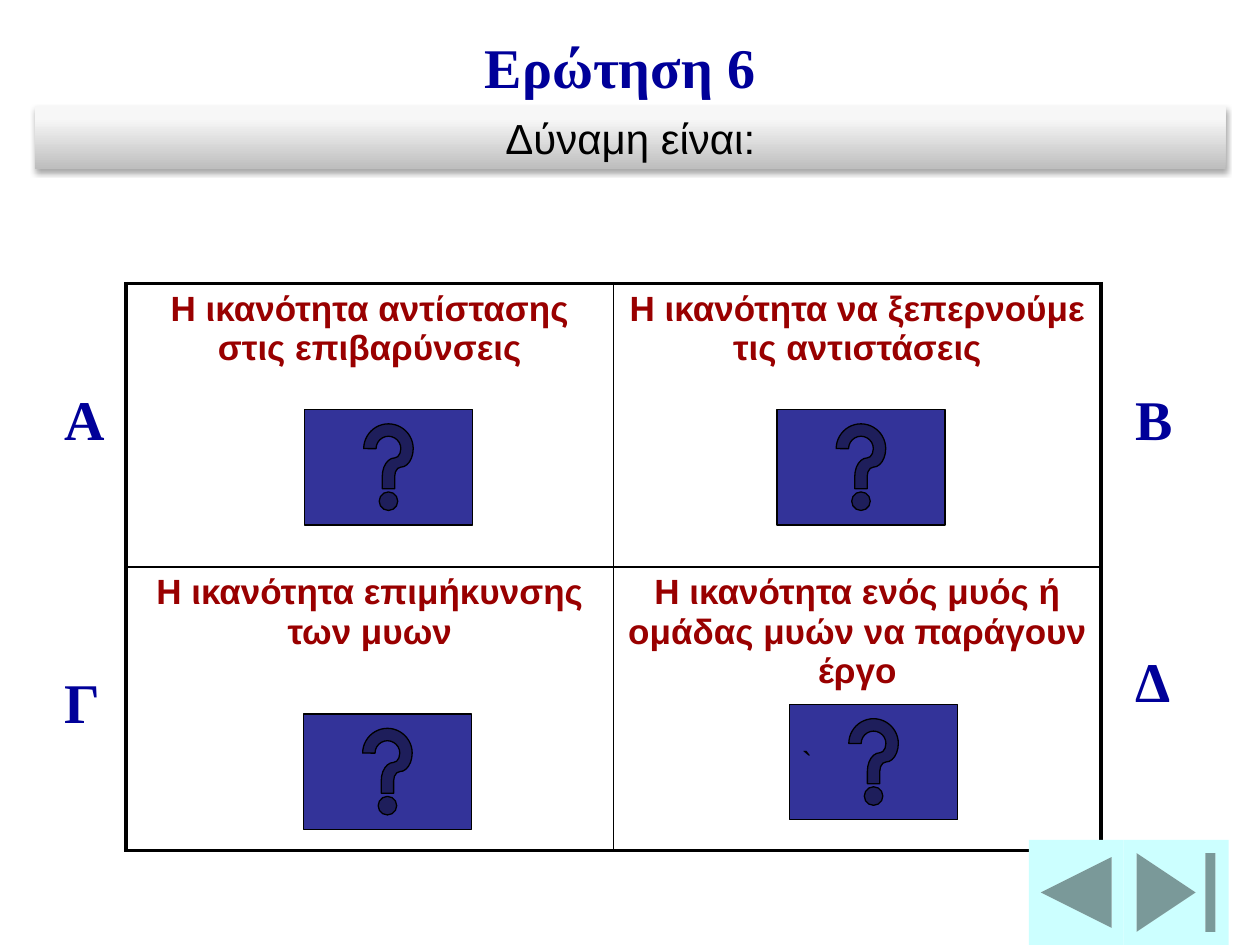
from lxml import etree
from pptx import Presentation
from pptx.dml.color import RGBColor
from pptx.enum import shapes, text
from pptx.oxml import parse_xml
from pptx.oxml.ns import nsdecls, qn
from pptx.util import Pt

THEME = {
    "navy": "000099", "red": "990000", "black": "000000", "white": "FFFFFF",
    "button": "333399", "navigation": "CCFFFF",
    "heading": {"name": "Times New Roman", "size": Pt(32), "bold": True},
    "answer": {"name": "Arial", "size": Pt(20), "bold": True},
    "question": {"name": "Arial", "size": Pt(24), "bold": False},
    "mark": {"name": "Arial", "size": Pt(18), "bold": False},
    "thin": 1, "thick": 2.25, "outline": 0.75,
}

ANSWERS = [
    ["Η ικανότητα αντίστασης στις επιβαρύνσεις", "Η ικανότητα να ξεπερνούμε τις αντιστάσεις"],
    ["Η ικανότητα επιμήκυνσης των μυων", "H ικανότητα ενός μυός ή ομάδας μυών να παράγουν έργο"],
]
TABLE_LEFT, TABLE_TOP, COLUMN, ROW = 72, 162, 278.64, 162
HEADINGS = [
    ("Α", 30, 216, 36), ("Γ", 30, 378, 36),
    ("Β", 642, 216, 36), ("Δ", 642, 366, 36),
    ("Ερώτηση 6", 270, 15, 192),
]
HEADING_HEIGHT = 45.36
QUESTION = ("Δύναμη είναι:", 20, 60.5, 680.4, 36)
HELP_BUTTONS = [("`", 451.2, 402.5), ("", 173.4, 408), ("", 444, 234), ("", 174, 234)]
HELP_SIZE = (96, 66)
NAVIGATION = [
    (shapes.MSO_SHAPE.ACTION_BUTTON_END, 642, 60),
    (shapes.MSO_SHAPE.ACTION_BUTTON_BACK_OR_PREVIOUS, 588, 54),
]
NAVIGATION_TOP, NAVIGATION_HEIGHT = 480, 60
GRADIENT = [(0, "BEBEBE"), (80, "F7F7F7"), (100, "F8F8F8")]


def color(name):
    return RGBColor.from_string(THEME[name])


def apply(target, values):
    for name, value in values.items():
        setattr(target, name, value)


def write(frame, words, style, ink, align=text.PP_ALIGN.LEFT, before=0):
    para = frame.paragraphs[0]
    para.alignment = align
    if before:
        spacing = etree.SubElement(para._p.get_or_add_pPr(), qn("a:spcBef"))
        etree.SubElement(spacing, qn("a:spcPct")).set("val", str(before * 1000))
    span = para.add_run()
    span.text = words
    apply(span.font, THEME[style])
    span.font.color.rgb = color(ink)


def border(cell, side, width):
    cell._tc.get_or_add_tcPr().append(parse_xml(
        f'<a:ln{side} {nsdecls("a")} w="{int(Pt(width))}"><a:solidFill>'
        f'<a:srgbClr val="{THEME["black"]}"/></a:solidFill></a:ln{side}>'))


def add_answers(page):
    rows, columns = len(ANSWERS), len(ANSWERS[0])
    table = page.shapes.add_table(rows, columns, Pt(TABLE_LEFT), Pt(TABLE_TOP),
                                  Pt(columns * COLUMN), Pt(rows * ROW)).table
    apply(table, {"first_row": False, "horz_banding": False})
    for column in table.columns:
        column.width = Pt(COLUMN)
    for row, answers in enumerate(ANSWERS):
        table.rows[row].height = Pt(ROW)
        for column, words in enumerate(answers):
            cell = table.cell(row, column)
            outer = {"L": column == 0, "R": column == columns - 1,
                     "T": row == 0, "B": row == rows - 1}
            for side, is_outer in outer.items():
                border(cell, side, THEME["thick" if is_outer else "thin"])
            cell.fill.solid()
            cell.fill.fore_color.rgb = color("white")
            write(cell.text_frame, words, "answer", "red", text.PP_ALIGN.CENTER, 20)


def add_heading(page, words, left, top, width):
    box = page.shapes.add_textbox(Pt(left), Pt(top), Pt(width), Pt(HEADING_HEIGHT))
    apply(box.text_frame, {"word_wrap": True, "auto_size": text.MSO_AUTO_SIZE.SHAPE_TO_FIT_TEXT})
    write(box.text_frame, words, "heading", "navy", before=50)


def add_button(page, kind, fill, left, top, width, height, outlined=False):
    button = page.shapes.add_shape(kind, Pt(left), Pt(top), Pt(width), Pt(height))
    button.shadow.inherit = False
    button.fill.solid()
    button.fill.fore_color.rgb = color(fill)
    if outlined:
        button.line.color.rgb = color("black")
        button.line.width = Pt(THEME["outline"])
    else:
        button.line.fill.background()
    return button


def add_question(page):
    words, *place = QUESTION
    bar = page.shapes.add_shape(shapes.MSO_SHAPE.RECTANGLE, *map(Pt, place))
    bar.shadow.inherit = False
    bar.line.fill.background()
    stops = "".join(f'<a:gs pos="{at * 1000}"><a:srgbClr val="{shade}"/></a:gs>'
                    for at, shade in GRADIENT)
    properties = bar._element.spPr
    properties.find(qn("a:prstGeom")).addnext(parse_xml(
        f'<a:gradFill {nsdecls("a")} rotWithShape="1"><a:gsLst>{stops}</a:gsLst>'
        '<a:lin ang="16200000" scaled="0"/></a:gradFill>'))
    properties.find(qn("a:effectLst")).append(parse_xml(
        f'<a:outerShdw {nsdecls("a")} blurRad="{int(Pt(3.1))}" dist="{int(Pt(1.8))}" '
        f'dir="5400000" rotWithShape="0"><a:srgbClr val="{THEME["black"]}">'
        '<a:alpha val="35000"/></a:srgbClr></a:outerShdw>'))
    apply(bar.text_frame, {"word_wrap": True, "vertical_anchor": text.MSO_ANCHOR.TOP,
                           "auto_size": text.MSO_AUTO_SIZE.SHAPE_TO_FIT_TEXT})
    write(bar.text_frame, words, "question", "black", text.PP_ALIGN.CENTER)


def main():
    deck = Presentation()
    apply(deck, {"slide_width": Pt(720), "slide_height": Pt(540)})
    page = deck.slides.add_slide(deck.slide_layouts[6])
    add_answers(page)
    for heading in HEADINGS:
        add_heading(page, *heading)
    for words, left, top in HELP_BUTTONS:
        button = add_button(page, shapes.MSO_SHAPE.ACTION_BUTTON_HELP, "button",
                            left, top, *HELP_SIZE, outlined=True)
        if words:
            apply(button.text_frame, {"word_wrap": False,
                                      "vertical_anchor": text.MSO_ANCHOR.MIDDLE})
            write(button.text_frame, words, "mark", "black")
    for kind, left, width in NAVIGATION:
        add_button(page, kind, "navigation", left, NAVIGATION_TOP, width, NAVIGATION_HEIGHT)
    add_question(page)
    deck.save("out.pptx")


if __name__ == "__main__":
    main()
